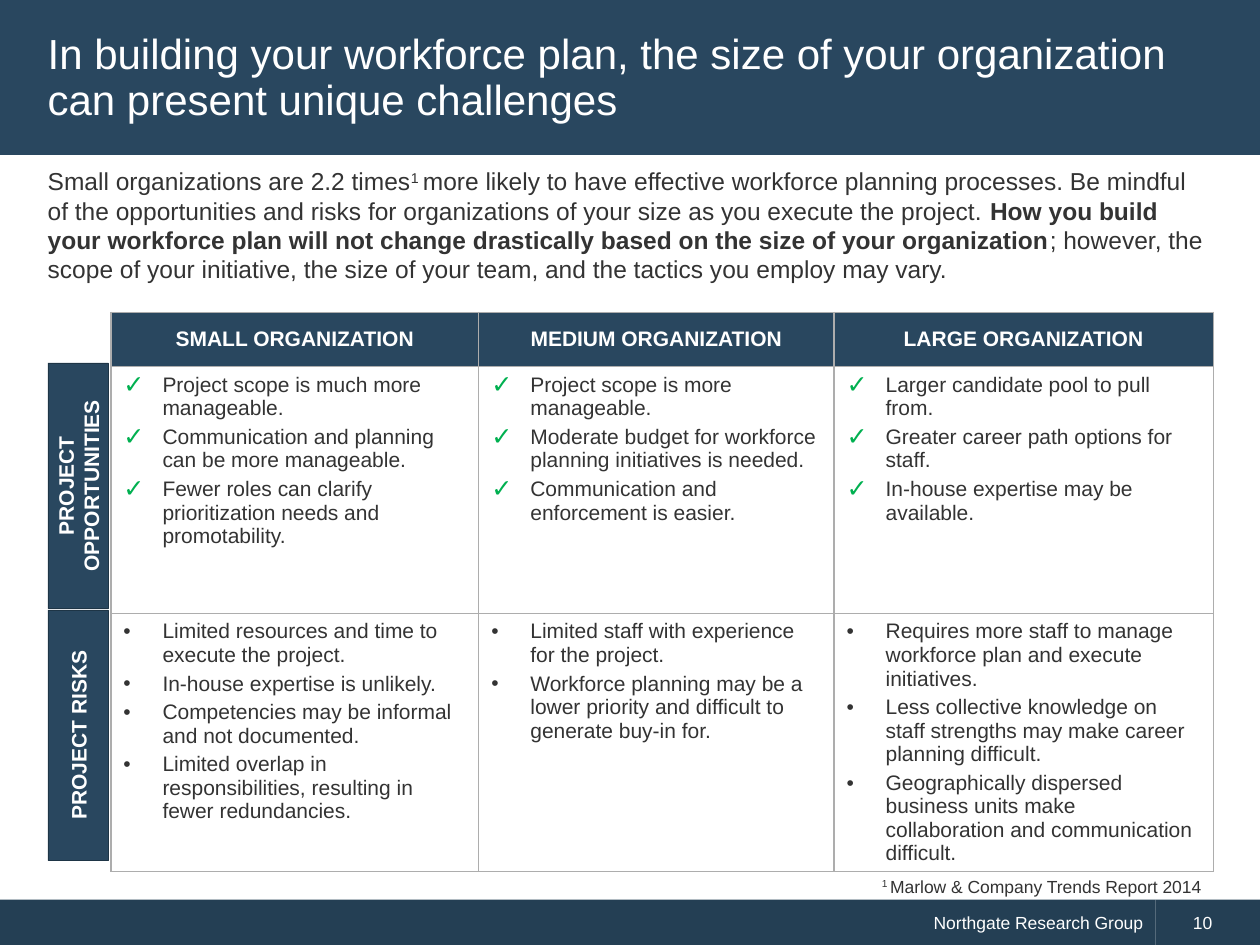
from dataclasses import dataclass

from lxml.etree import SubElement
from pptx import Presentation
from pptx.dml.color import RGBColor
from pptx.enum.shapes import MSO_SHAPE as Shape
from pptx.enum.text import MSO_ANCHOR as Anchor, PP_ALIGN as Align
from pptx.oxml import parse_xml
from pptx.oxml.ns import nsdecls, qn
from pptx.util import Inches, Pt

WIDTH, HEIGHT = Inches(10), Inches(7.5)
COLS, ROWS = 100, 75  # layout grid over the whole slide


@dataclass(frozen=True)
class Theme:
    font: str = "Arial"
    navy: str = "29475F"
    footer: str = "243F54"
    edge: str = "1E3546"
    rule: str = "ADADAD"
    ink: str = "333333"
    white: str = "FFFFFF"
    check: str = "00B050"
    title: int = 24
    lead: int = 14
    body: int = 12
    small: int = 10


T = Theme()

HEADERS = ["SMALL ORGANIZATION", "MEDIUM ORGANIZATION", "LARGE ORGANIZATION"]
OPPORTUNITIES = [
    ["Project scope is much more manageable.",
     "Communication and planning can be more manageable.",
     "Fewer roles can clarify prioritization needs and promotability."],
    ["Project scope is more manageable.",
     "Moderate budget for workforce planning initiatives is needed.",
     "Communication and enforcement is easier."],
    ["Larger candidate pool to pull from.",
     "Greater career path options for staff.",
     "In-house expertise may be available."],
]
RISKS = [
    ["Limited resources and time to execute the project.",
     "In-house expertise is unlikely.",
     "Competencies may be informal and not documented.",
     "Limited overlap in responsibilities, resulting in fewer redundancies."],
    ["Limited staff with experience for the project.",
     "Workforce planning may be a lower priority and difficult to generate buy-in for."],
    ["Requires more staff to manage workforce plan and execute initiatives.",
     "Less collective knowledge on staff strengths may make career planning difficult.",
     "Geographically dispersed business units make collaboration and communication difficult."],
]


def col(n):
    return round(WIDTH * n / COLS)


def row(n):
    return round(HEIGHT * n / ROWS)


def box(x, y, w, h):
    return col(x), row(y), col(w), row(h)


def add_run(p, text, size, color, bold=False, raised=False):
    r = p.add_run()
    r.text = text
    r.font.name, r.font.size, r.font.bold = T.font, Pt(size), bold
    r.font.color.rgb = RGBColor.from_string(color)
    if raised:
        r.font._element.set("baseline", "30000")


def add_panel(s, place, fill, line=None):
    sp = s.shapes.add_shape(Shape.RECTANGLE, *place)
    sp.shadow.inherit = False
    sp.fill.solid()
    sp.fill.fore_color.rgb = RGBColor.from_string(fill)
    if line:
        sp.line.color.rgb = RGBColor.from_string(line)
        sp.line.width = Pt(0.25)
    else:
        sp.line.fill.background()
    sp.text_frame.vertical_anchor = Anchor.MIDDLE
    return sp.text_frame


def add_text(s, place, anchor=Anchor.TOP):
    tf = s.shapes.add_textbox(*place).text_frame
    tf.word_wrap = True
    tf.vertical_anchor = anchor
    return tf.paragraphs[0]


def add_footer_part(s, place, text, align, **indent):
    p = add_panel(s, place, T.footer).paragraphs[0]
    p.alignment = align
    for side, length in indent.items():
        p._p.get_or_add_pPr().set(side, str(col(length)))
    add_run(p, text, T.small, T.white)


def add_side_label(s, place, text):
    tf = add_panel(s, place, T.navy, T.edge)
    tf.word_wrap = True
    tf._txBody.bodyPr.set("vert", "vert270")
    tf.paragraphs[0].alignment = Align.CENTER
    add_run(tf.paragraphs[0], text, T.body, T.white, bold=True)


def set_bullet(p, mark, color, percent):
    pPr = p._p.get_or_add_pPr()
    pPr.set("marL", str(col(3.1)))
    pPr.set("indent", str(-col(3.1)))
    SubElement(SubElement(pPr, qn("a:buClr")), qn("a:srgbClr"), val=color)
    SubElement(pPr, qn("a:buSzPct"), val=str(percent * 1000))
    SubElement(pPr, qn("a:buFont"), typeface=T.font)
    SubElement(pPr, qn("a:buChar"), char=mark)


def set_borders(cell):
    tcPr = cell._tc.get_or_add_tcPr()
    for i, side in enumerate(("lnL", "lnR", "lnT", "lnB")):
        tcPr.insert(i, parse_xml(
            f'<a:{side} {nsdecls("a")} w="{Pt(1)}"><a:solidFill>'
            f'<a:srgbClr val="{T.rule}"/></a:solidFill></a:{side}>'))


def fill_list(cell, items, mark, color, percent, before=0, after=0):
    tf = cell.text_frame
    for i, item in enumerate(items):
        p = tf.paragraphs[0] if i == 0 else tf.add_paragraph()
        p.space_before, p.space_after = Pt(before), Pt(after)
        set_bullet(p, mark, color, percent)
        add_run(p, item, T.body, T.ink)


def add_comparison(s, place, widths, heights):
    tbl = s.shapes.add_table(len(heights), len(widths), *place).table
    for column, w in zip(tbl.columns, widths):
        column.width = col(w)
    for line, h in zip(tbl.rows, heights):
        line.height = row(h)
    for cell in tbl.iter_cells():
        cell.fill.background()
        set_borders(cell)
    for c, header in enumerate(HEADERS):
        head = tbl.cell(0, c)
        head.fill.solid()
        head.fill.fore_color.rgb = RGBColor.from_string(T.navy)
        head.vertical_anchor = Anchor.MIDDLE
        p = head.text_frame.paragraphs[0]
        p.alignment = Align.CENTER
        add_run(p, header, T.body, T.white, bold=True)
        fill_list(tbl.cell(1, c), OPPORTUNITIES[c], "✓", T.check, 120, after=3)
        fill_list(tbl.cell(2, c), RISKS[c], "•", T.ink, 100, before=2.9)


def main():
    prs = Presentation()
    prs.slide_width, prs.slide_height = WIDTH, HEIGHT
    s = prs.slides.add_slide(prs.slide_layouts[6])

    # Footer band
    add_footer_part(s, box(0, 71.4, 91.7, 3.7), "Northgate Research Group",
                    Align.RIGHT, marL=2.9)
    add_footer_part(s, box(91.7, 71.4, 8.3, 3.7), "10", Align.LEFT, marL=2)

    # Comparison table with its row labels
    add_comparison(s, box(8.8, 24.8, 87.5, 43.8), (29.2, 28.2, 30.1), (4.3, 19.6, 20))
    add_side_label(s, box(3.8, 28.8, 4.8, 19.5), "PROJECT OPPORTUNITIES")
    add_side_label(s, box(3.8, 48.4, 4.8, 19.9), "PROJECT RISKS")

    # Lead paragraph
    p = add_text(s, box(2.8, 12.7, 94.2, 10.4))
    add_run(p, "Small organizations are 2.2 times", T.lead, T.ink)
    add_run(p, "1 ", T.lead, T.ink, raised=True)
    add_run(p, "more likely to have effective workforce planning processes. Be mindful of the "
            "opportunities and risks for organizations of your size as you execute the project. ",
            T.lead, T.ink)
    add_run(p, "How you build your workforce plan will not change drastically based on the "
            "size of your organization", T.lead, T.ink, bold=True)
    add_run(p, "; however, the scope of your initiative, the size of your team, and the "
            "tactics you employ may vary.", T.lead, T.ink)

    # Footnote
    p = add_text(s, box(69, 69, 31, 2.7))
    add_run(p, "1 ", T.small, T.ink, raised=True)
    add_run(p, "Marlow & Company Trends Report 2014", T.small, T.ink)

    # Title band
    add_panel(s, box(0, 0, 100, 12.3), T.navy)
    p = add_text(s, box(2.8, 1.5, 93.6, 9.4), Anchor.MIDDLE)
    p.line_spacing = Pt(26)
    add_run(p, "In building your workforce plan, the size of your organization can present "
            "unique challenges", T.title, T.white)

    prs.save("out.pptx")


if __name__ == "__main__":
    main()
